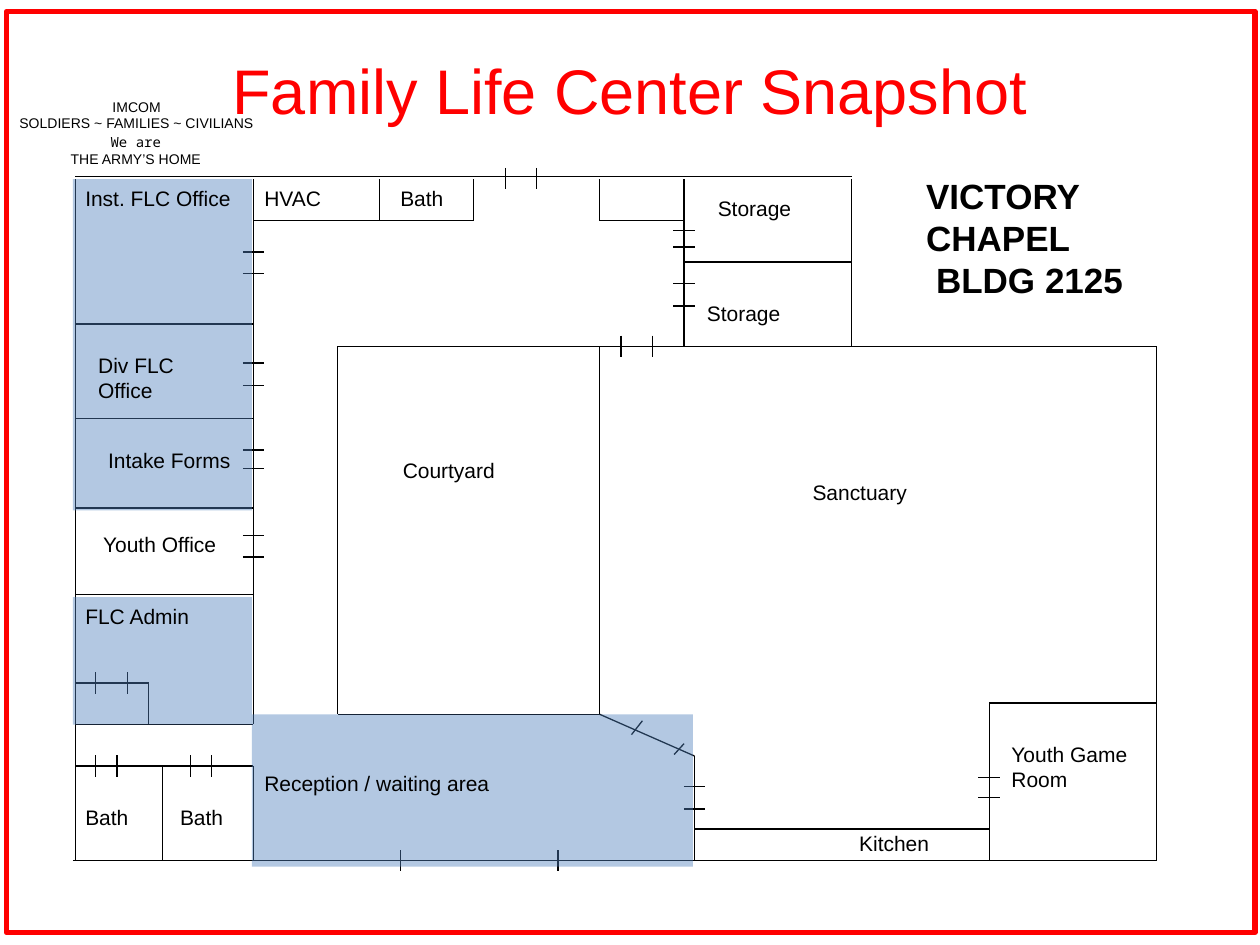
"""Floor plan of the Family Life Center on one slide."""
from lxml import etree
from pptx import Presentation
from pptx.dml.color import RGBColor
from pptx.enum.shapes import MSO_CONNECTOR, MSO_SHAPE
from pptx.enum.text import MSO_ANCHOR, PP_ALIGN
from pptx.oxml.ns import qn
from pptx.util import Cm, Pt

RED = RGBColor(0xFF, 0x00, 0x00)
BLACK = RGBColor(0x00, 0x00, 0x00)
BLUE = RGBColor(0x4F, 0x81, 0xBD)
BLUE_OPACITY = 43000
TICK = 0.43
WEST, CORRIDOR, EAST = 1.52, 5.11, 23.32
NORTH, CEILING, SOUTH = 3.56, 3.61, 17.35
STORAGE_LEFT, STORAGE_RIGHT = 13.79, 17.17
CLOSET_BOTTOM = 4.45
COURT_LEFT, COURT_RIGHT, COURT_TOP, COURT_BOTTOM = 6.81, 12.09, 6.98, 14.4
RECEPTION_RIGHT, GAME_ROOM_LEFT = 14, 19.94

WALLS = [
    (WEST, NORTH, STORAGE_RIGHT, NORTH),
    (WEST, CEILING, WEST, SOUTH),
    (1.47, SOUTH, EAST, SOUTH),
    (STORAGE_RIGHT, CEILING, STORAGE_RIGHT, COURT_TOP),
    (COURT_LEFT, COURT_TOP, EAST, COURT_TOP),
    (EAST, COURT_TOP, EAST, SOUTH),
    (COURT_RIGHT, COURT_TOP, COURT_RIGHT, COURT_BOTTOM),
    (COURT_LEFT, COURT_BOTTOM, COURT_RIGHT, COURT_BOTTOM),
    (COURT_LEFT, COURT_TOP, COURT_LEFT, COURT_BOTTOM),
    (COURT_RIGHT, COURT_BOTTOM, RECEPTION_RIGHT, 15.24),
    (RECEPTION_RIGHT, 15.24, RECEPTION_RIGHT, SOUTH),
    (RECEPTION_RIGHT, 16.71, GAME_ROOM_LEFT, 16.71),
    (GAME_ROOM_LEFT, 14.17, GAME_ROOM_LEFT, SOUTH),
    (GAME_ROOM_LEFT, 14.17, EAST, 14.17),
    (CORRIDOR, CEILING, CORRIDOR, 14.6),
    (CORRIDOR, 15.44, CORRIDOR, SOUTH),
    *[(WEST, y, CORRIDOR, y) for y in (6.53, 8.43, 10.24, 11.99, 14.6, 15.44)],
    (WEST, 13.77, 3, 13.77),
    (3, 13.77, 3, 14.6),
    (3.28, 15.44, 3.28, SOUTH),
    (STORAGE_LEFT, CEILING, STORAGE_LEFT, COURT_TOP),
    (STORAGE_LEFT, 5.28, STORAGE_RIGHT, 5.28),
    (COURT_RIGHT, CLOSET_BOTTOM, STORAGE_LEFT, CLOSET_BOTTOM),
    (COURT_RIGHT, CEILING, COURT_RIGHT, CLOSET_BOTTOM),
    (CORRIDOR, CLOSET_BOTTOM, 9.55, CLOSET_BOTTOM),
    (9.55, CEILING, 9.55, CLOSET_BOTTOM),
    (7.65, CEILING, 7.65, CLOSET_BOTTOM),
]
SLANTED_TICKS = [(13.59, 15.21, 13.79, 14.99), (12.73, 14.81, 12.95, 14.53)]
DOORS_IN_VERTICAL_WALLS = {
    CORRIDOR: (5.08, 5.51, 7.32, 7.77, 9.07, 9.45, 10.8, 11.23),
    STORAGE_LEFT: (4.65, 4.98, 5.72, 6.17),
    RECEPTION_RIGHT: (15.85, 16.31),
    GAME_ROOM_LEFT: (15.67, 16.08),
}
DOORS_IN_HORIZONTAL_WALLS = {
    3.6: (10.19, 10.82),
    COURT_TOP: (12.52, 13.16),
    13.77: (1.93, 2.57),
    15.44: (1.93, 2.36, 3.84, 4.27),
    SOUTH: (8.08, 11.25),
}
BLUE_ROOMS = [
    ("Inst. FLC Office", (1.47, 3.61, 3.61, 6.68), 0.13),
    ("FLC Admin", (1.47, 12.04, 3.61, 2.57), 0.13),
    ("Reception / waiting area", (5.08, 14.4, 8.89, 3.07), 1.14),
]
LABELS = [
    ("Courtyard", 7.87, 9.09, 2.97),
    ("Sanctuary", 16.13, 9.53, 2.97),
    ("Youth Game Room", 20.14, 14.81, 2.97),
    ("Kitchen", 17.07, 16.61, 2.97),
    ("Div FLC Office", 1.73, 6.98, 2.97),
    ("Intake Forms", 1.93, 8.89, 2.97),
    ("Youth Office", 1.83, 10.59, 2.97),
    ("Storage", 14, 5.92, 2.97),
    ("Storage", 14.22, 3.81, 2.97),
    ("HVAC", 5.08, 3.61, 2.97),
    ("Bath", 7.82, 3.61, 1.7),
    ("Bath", 3.38, 16.08, 1.7),
    ("Bath", 1.47, 16.08, 1.7),
]


def write_text(shape, *lines, size=12, color=BLACK, bold=False, fonts=("Arial",),
               align=PP_ALIGN.LEFT, top=0.13):
    """Fill a shape with one paragraph per line, cycling through the fonts."""
    frame = shape.text_frame
    frame.word_wrap = True
    frame.vertical_anchor = MSO_ANCHOR.TOP
    frame.margin_top = Cm(top)
    for index, line in enumerate(lines):
        paragraph = frame.paragraphs[0] if index == 0 else frame.add_paragraph()
        paragraph.alignment = align
        run = paragraph.add_run()
        run.text = line
        run.font.name = fonts[index % len(fonts)]
        run.font.size = Pt(size)
        run.font.bold = bold
        run.font.color.rgb = color
    return frame


def add_label(slide, *lines, box, **text_format):
    """Add a text box and return its text frame."""
    shape = slide.shapes.add_textbox(*map(Cm, box))
    return write_text(shape, *lines, **text_format)


def add_line(slide, *ends):
    """Add a thin black straight line."""
    connector = slide.shapes.add_connector(MSO_CONNECTOR.STRAIGHT, *map(Cm, ends))
    connector.line.color.rgb = BLACK
    connector.line.width = Pt(0.75)
    etree.SubElement(connector._element.spPr, qn("a:effectLst"))


def add_rectangle(slide, box):
    """Add a rectangle without shadow."""
    shape = slide.shapes.add_shape(MSO_SHAPE.RECTANGLE, *map(Cm, box))
    shape.shadow.inherit = False
    return shape


def add_frame(slide):
    """Add the red border around the slide."""
    shape = add_rectangle(slide, (0.13, 0.23, 25.17, 18.57))
    shape.fill.background()
    shape.line.color.rgb = RED
    shape.line.width = Pt(3)


def add_blue_room(slide, name, box, top):
    """Add a translucent blue room with its name."""
    shape = add_rectangle(slide, box)
    shape.fill.solid()
    shape.fill.fore_color.rgb = BLUE
    color = shape._element.spPr.find(qn("a:solidFill"))[0]
    etree.SubElement(color, qn("a:alpha"), val=str(BLUE_OPACITY))
    shape.line.fill.background()
    write_text(shape, name, top=top)


def add_doors(slide):
    """Mark both sides of each door with a short tick across the wall."""
    half = TICK / 2
    for x, positions in DOORS_IN_VERTICAL_WALLS.items():
        for y in positions:
            add_line(slide, x - half, y, x + half, y)
    for y, positions in DOORS_IN_HORIZONTAL_WALLS.items():
        for x in positions:
            add_line(slide, x, y - half, x, y + half)
    for ends in SLANTED_TICKS:
        add_line(slide, *ends)


def add_title(slide):
    """Place and format the title placeholder."""
    title = slide.shapes.title
    title.left, title.top, title.width, title.height = map(Cm, (1.27, 0.76, 22.86, 3.18))
    write_text(title, "Family Life Center Snapshot", size=36, color=RED,
               align=PP_ALIGN.CENTER, top=0.27)


def main():
    """Build the slide and save it."""
    presentation = Presentation()
    presentation.slide_width, presentation.slide_height = Cm(25.4), Cm(19.05)
    slide = presentation.slides.add_slide(presentation.slide_layouts[5])
    add_frame(slide)
    add_label(slide, "IMCOM", "SOLDIERS ~ FAMILIES ~ CIVILIANS",
              box=(0, 1.85, 5.51, 1.45), size=8, align=PP_ALIGN.CENTER)
    add_label(slide, "We are", "THE ARMY’S HOME", box=(0.48, 2.57, 4.52, 0.84),
              size=8, fonts=("Noto Sans Mono", "Arial"), align=PP_ALIGN.CENTER)
    add_title(slide)
    for wall in WALLS:
        add_line(slide, *wall)
    add_doors(slide)
    for room in BLUE_ROOMS:
        add_blue_room(slide, *room)
    for name, left, top, width in LABELS:
        add_label(slide, name, box=(left, top, width, 0.76))
    building = add_label(slide, "VICTORY CHAPEL", "BLDG 2125",
                         box=(18.42, 3.38, 5.28, 2.82), size=20, bold=True)
    properties = building.paragraphs[1]._p.get_or_add_pPr()
    properties.set("marL", str(Cm(0.2)))
    properties.set("indent", "0")
    presentation.save("out.pptx")


if __name__ == "__main__":
    main()
